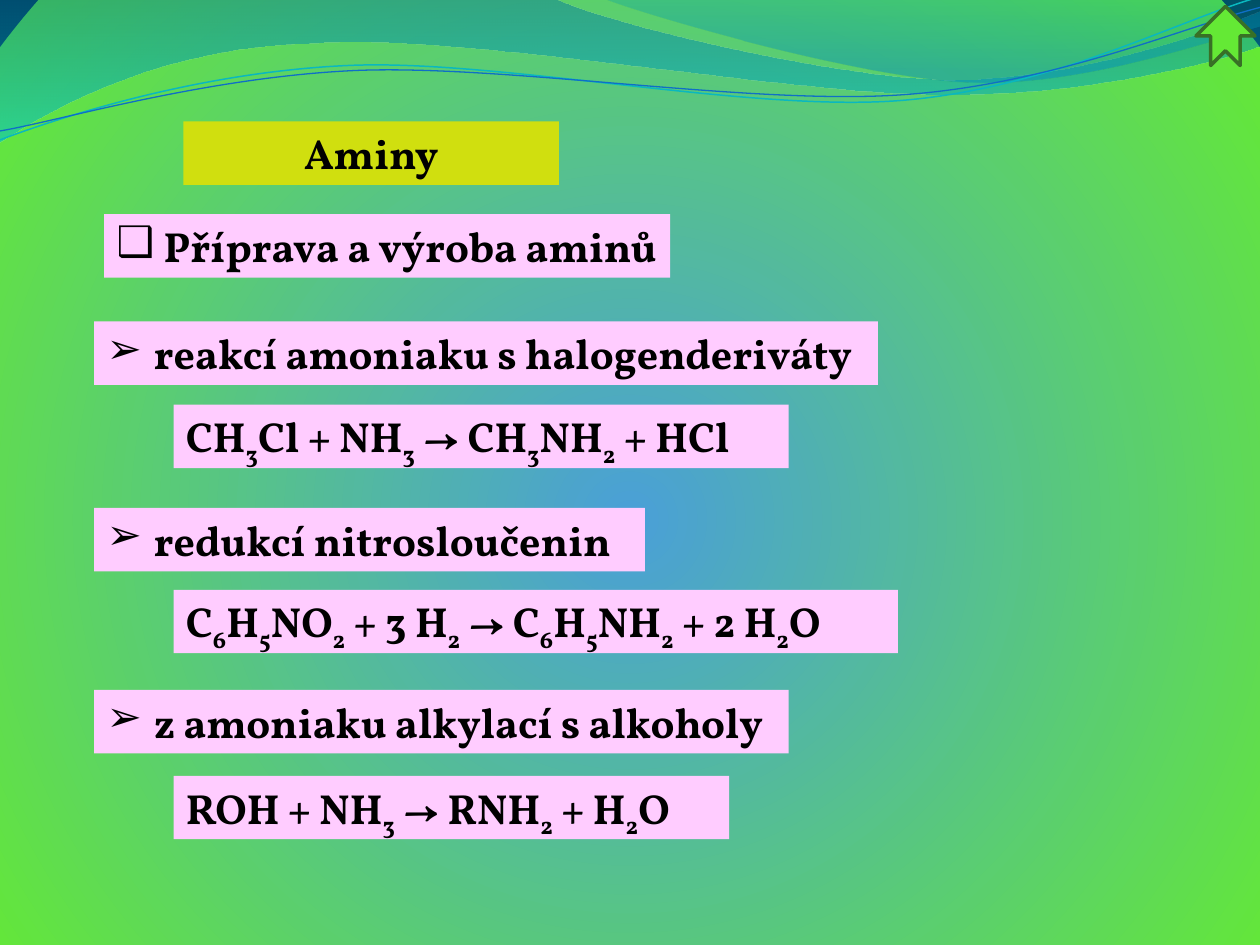
import math

import pptx
import pptx.dml.color
import pptx.enum.shapes
import pptx.enum.text
import pptx.oxml
import pptx.oxml.ns
import pptx.util
from pptx.util import Cm

COLOURS = {
    "centre": "4A9FD8", "green": "64E935", "corner": "00304A",
    "title": "D0DF0F", "pink": "FFCCFF", "text": "000000",
    "deep blue": "0074A1", "cyan": "00C6CF", "teal": "00A1A9", "blue": "008BBF",
    "cyan line": "0AB8BF", "blue line": "0F6FC6", "arrow edge": "387026",
}
FONT = "Vollkorn"
TEXT_SIZE = 24
ROW_HEIGHT = 1.28
HANGING = 0.95
LINE_TILT = -2.7
LINE_CENTRE = (12.68, 1.48)
HARD_SPACE = chr(160)

# Each wave is a start point followed by lines (one point) and Bézier curves (three points), in cm.
BROAD_WAVE = [
    (0, 0), [(11.18, -0.03)],
    [(12.09, 0.43), (16.87, 1.6), (19.25, 1.6)],
    [(21.67, 1.6), (24.33, 0.66), (25.4, 0.23)],
    [(25.43, 0.91)],
    [(24.97, 1.12), (22.1, 1.93), (18.95, 1.9)],
    [(15.8, 1.9), (9.7, 0.71), (6.53, 0.86)],
    [(3.28, 0.91), (1.17, 2.11), (-0.03, 2.87)],
    [(0, 0)],
]
RIGHT_WAVE = [
    (12.17, -0.03),
    [(12.93, 0.28), (17.32, 1.57), (19.53, 1.65)],
    [(21.74, 1.75), (24.41, 0.81), (25.4, 0.53)],
    [(25.4, 0)], [(12.17, -0.03)],
]
CYAN_LINE = [
    (0, 2.82),
    [(1.22, 2.36), (4.01, 1.45), (7.04, 1.32)],
    [(10.03, 1.19), (15.06, 2.26), (18.11, 2.03)],
    [(21.16, 1.8), (23.83, 0.38), (25.35, -0.05)],
]
BLUE_LINE = [
    (0, 2.64),
    [(1.19, 2.44), (4.17, 1.55), (7.19, 1.42)],
    [(10.24, 1.3), (15.16, 2.13), (18.21, 1.91)],
    [(21.23, 1.7), (23.9, 0.53), (25.4, 0.15)],
]

# Top, width and reaction name; then top, width and equation.
# "_" marks a subscript and "~" a space that does not break.
REACTIONS = [
    ((6.48, 15.8, "reakcí amoniaku s halogenderiváty"),
     (8.16, 12.4, "CH_3Cl~+~NH_3~→~CH_3NH_2~+~HCl")),
    ((10.24, 11.1, "redukcí nitrosloučenin"),
     (11.89, 14.6, "C_6H_5NO_2~+ 3~H_2~→~C_6H_5NH_2~+ 2~H_2O")),
    ((13.91, 14, "z amoniaku~alkylací~s alkoholy"),
     (15.64, 11.2, "ROH + NH_3~→ RNH_2~+ H_2O")),
]


def colour(name):
    return pptx.dml.color.RGBColor.from_string(COLOURS[name])


def turn(point, degrees):
    """Turn a point clockwise about the centre of the two thin lines."""
    across, down = (value - centre for value, centre in zip(point, LINE_CENTRE))
    cosine, sine = math.cos(math.radians(degrees)), math.sin(math.radians(degrees))
    return (LINE_CENTRE[0] + across * cosine - down * sine,
            LINE_CENTRE[1] + across * sine + down * cosine)


def set_gradient(owner, fill, stops, direction):
    """Give fill the stops (percent, colour name, opacity percent) and a direction element."""
    fill.gradient()
    stop_xml = "".join(
        f'<a:gs pos="{position * 1000}"><a:srgbClr val="{COLOURS[name]}">'
        f'<a:alpha val="{opacity * 1000}"/></a:srgbClr></a:gs>'
        for position, name, opacity in stops)
    gradient = pptx.oxml.parse_xml(
        f'<a:gradFill {pptx.oxml.ns.nsdecls("a")} rotWithShape="1">'
        f'<a:gsLst>{stop_xml}</a:gsLst>{direction}</a:gradFill>')
    former = owner.element.xpath(".//a:gradFill")[0]
    former.getparent().replace(former, gradient)


class SlidePainter:
    def __init__(self, slide):
        self.slide = slide

    def background(self):
        set_gradient(
            self.slide, self.slide.background.fill,
            [(0, "centre", 100), (100, "green", 100), (100, "corner", 100)],
            '<a:path path="circle">'
            '<a:fillToRect l="10000" t="110000" r="10000" b="100000"/></a:path>')

    def outline(self, outline, close, tilt=0):
        """Draw straight lines through all points, then join each three into a curve."""
        start, *segments = outline
        points = [turn(point, -tilt) for point in [start, *sum(segments, [])]]
        points = [(Cm(x), Cm(y)) for x, y in points]
        builder = self.slide.shapes.build_freeform(*points[0])
        builder.add_line_segments(points[1:], close=close)
        shape = builder.convert_to_shape()
        shape.rotation = tilt % 360
        shape.shadow.inherit = False
        lines = iter(shape.element.xpath(".//a:lnTo"))
        for segment in segments:
            first = next(lines)
            if len(segment) == 3:
                curve = pptx.oxml.parse_xml(f'<a:cubicBezTo {pptx.oxml.ns.nsdecls("a")}/>')
                first.addprevious(curve)
                for line in (first, next(lines), next(lines)):
                    curve.append(line[0])
                    line.getparent().remove(line)
        return shape

    def wave(self, outline, stops):
        shape = self.outline(outline, close=True)
        shape.line.fill.background()
        set_gradient(shape, shape.fill, stops, '<a:lin ang="5400000" scaled="0"/>')

    def wave_line(self, outline, name, width):
        shape = self.outline(outline, close=False, tilt=LINE_TILT)
        shape.fill.background()
        shape.line.color.rgb = colour(name)
        shape.line.width = pptx.util.Pt(width)

    def label(self, left, top, width, text, fill="pink", bullet=None, centred=False):
        box = self.slide.shapes.add_textbox(Cm(left), Cm(top), Cm(width), Cm(ROW_HEIGHT))
        box.fill.solid()
        box.fill.fore_color.rgb = colour(fill)
        frame = box.text_frame
        frame.word_wrap = True
        frame.auto_size = pptx.enum.text.MSO_AUTO_SIZE.SHAPE_TO_FIT_TEXT
        para = frame.paragraphs[0]
        para.font.name = FONT
        para.font.size = pptx.util.Pt(TEXT_SIZE)
        para.font.bold = True
        para.font.color.rgb = colour("text")
        if centred:
            para.alignment = pptx.enum.text.PP_ALIGN.CENTER
        if bullet:
            self.add_bullet(para, bullet)
        start, *rest = text.replace("~", HARD_SPACE).split("_")
        para.add_run().text = start
        for part in rest:
            span = para.add_run()
            span.text = part[0]
            span.font._element.set("baseline", "-25000")
            if part[1:]:
                para.add_run().text = part[1:]

    def add_bullet(self, para, symbol):
        properties = para._p.get_or_add_pPr()
        properties.set("marL", str(Cm(HANGING)))
        properties.set("indent", str(-Cm(HANGING)))
        for position, tag in enumerate((f'buFont {{}} typeface="{FONT}"',
                                        f'buChar {{}} char="{symbol}"')):
            properties.insert(position, pptx.oxml.parse_xml(
                f'<a:{tag.format(pptx.oxml.ns.nsdecls("a"))}/>'))

    def up_arrow(self, left, top, size):
        arrow = self.slide.shapes.add_shape(
            pptx.enum.shapes.MSO_SHAPE.NOTCHED_RIGHT_ARROW,
            Cm(left), Cm(top), Cm(size), Cm(size))
        arrow.rotation = 270
        arrow.shadow.inherit = False
        arrow.fill.solid()
        arrow.fill.fore_color.rgb = colour("green")
        arrow.line.color.rgb = colour("arrow edge")
        arrow.line.width = pptx.util.Pt(2)


def main():
    deck = pptx.Presentation()
    deck.slide_width, deck.slide_height = Cm(25.4), Cm(19.05)
    painter = SlidePainter(deck.slides.add_slide(deck.slide_layouts[6]))
    painter.background()
    painter.wave(BROAD_WAVE, [(0, "deep blue", 45), (100, "cyan", 55)])
    painter.wave(RIGHT_WAVE, [(0, "teal", 30), (80, "blue", 45)])
    painter.wave_line(CYAN_LINE, "cyan line", 0.85)
    painter.wave_line(BLUE_LINE, "blue line", 0.75)
    painter.label(3.7, 2.45, 7.57, "Aminy", fill="title", centred=True)
    painter.label(2.1, 4.32, 11.41, "Příprava a výroba aminů", bullet="❑")
    for (top, width, name), (equation_top, equation_width, equation) in REACTIONS:
        painter.label(1.9, top, width, name, bullet="➢")
        painter.label(3.5, equation_top, equation_width, equation)
    painter.up_arrow(24.11, 0.13, 1.19)
    deck.save("out.pptx")


if __name__ == "__main__":
    main()
